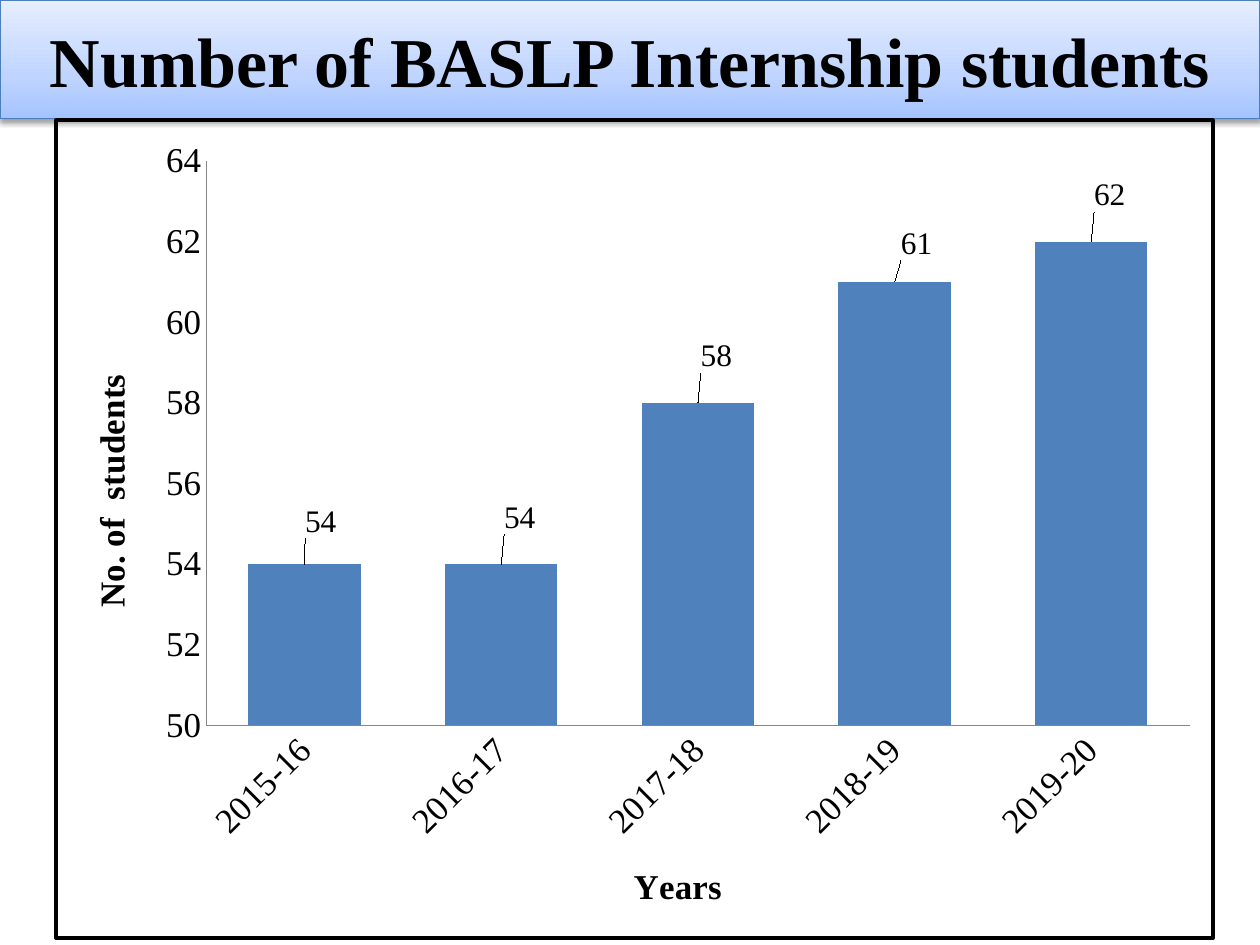
from lxml.etree import SubElement
from pptx import Presentation
from pptx.chart.data import CategoryChartData
from pptx.dml.color import RGBColor
from pptx.enum.chart import XL_CHART_TYPE, XL_LABEL_POSITION, XL_TICK_MARK
from pptx.enum.shapes import MSO_SHAPE
from pptx.enum.text import MSO_ANCHOR, PP_ALIGN
from pptx.oxml import parse_xml
from pptx.oxml.ns import nsdecls, qn
from pptx.util import Inches, Pt

TITLE = "Number of BASLP Internship students"
YEARS = ["2015-16", "2016-17", "2017-18", "2018-19", "2019-20"]
COUNTS = [54, 54, 58, 61, 62]
# Label shifts from their usual place, as shares of the chart size
SHIFTS = [(0.014, -0.025), (0.016, -0.03), (0.016, -0.03),
          (0.019, -0.02), (0.016, -0.03)]
STOPS = [(0, "A4C4FF"), (35, "BFD4FF"), (100, "E6EEFF")]

FONT = "Times New Roman"
BLACK = RGBColor(0, 0, 0)
BLUE = RGBColor(0x4F, 0x81, 0xBD)
EDGE = RGBColor(0x4B, 0x7E, 0xBC)
GRAY = RGBColor(0x86, 0x86, 0x86)


def style(font, size, bold=False):
    font.name, font.size, font.bold = FONT, Pt(size), bold
    font.color.rgb = BLACK


def layout(**parts):
    """Return a manual chart layout."""
    tags = "".join(f'<c:{k} val="{v}"/>' for k, v in parts.items())
    return parse_xml(f'<c:layout {nsdecls("c")}><c:manualLayout>{tags}'
                     '</c:manualLayout></c:layout>')


def set_axis(axis, name, turn):
    axis.has_major_gridlines = False
    axis.major_tick_mark = axis.minor_tick_mark = XL_TICK_MARK.NONE
    axis.format.line.color.rgb = GRAY
    axis.format.line.width = Pt(0.75)
    style(axis.tick_labels.font, 20)
    frame = axis.axis_title.text_frame
    frame.text = name
    style(frame.paragraphs[0].font, 20, True)
    frame._txBody.bodyPr.set("rot", str(turn * 60000))


deck = Presentation()
deck.slide_width, deck.slide_height = Inches(10), Inches(7.5)
slide = deck.slides.add_slide(deck.slide_layouts[6])

# Title band
band = slide.shapes.add_shape(MSO_SHAPE.RECTANGLE, 0, 0, Inches(10), Inches(0.94))
band.line.color.rgb = EDGE
band.line.width = Pt(0.75)
band.fill.gradient()
band.fill.gradient_angle = 90
stops = band._element.spPr.find(qn("a:gradFill")).find(qn("a:gsLst"))
for old in list(stops):
    stops.remove(old)
for spot, color in STOPS:
    stop = SubElement(stops, qn("a:gs"), pos=str(spot * 1000))
    SubElement(stop, qn("a:srgbClr"), val=color)
band.shadow.inherit = False
glow = SubElement(band._element.spPr.find(qn("a:effectLst")), qn("a:outerShdw"),
                  blurRad=str(Pt(3.1)), dist=str(Pt(1.6)), dir="5400000",
                  rotWithShape="0")
shade = SubElement(glow, qn("a:srgbClr"), val="000000")
SubElement(shade, qn("a:alpha"), val="38000")
text = band.text_frame
text.word_wrap = True
text.vertical_anchor = MSO_ANCHOR.MIDDLE
text.text = TITLE
text.paragraphs[0].alignment = PP_ALIGN.CENTER
style(text.paragraphs[0].font, 40, True)

# Column chart
data = CategoryChartData()
data.categories = YEARS
data.add_series("Series 1", COUNTS)
chart = slide.shapes.add_chart(
    XL_CHART_TYPE.COLUMN_CLUSTERED, Inches(0.43), Inches(0.94),
    Inches(9.21), Inches(6.52), data).chart
chart.has_legend = chart.has_title = False
style(chart.font, 12)
set_axis(chart.category_axis, "Years", 0)
set_axis(chart.value_axis, "No. of  students", -90)
chart.value_axis.minimum_scale = 50
chart.value_axis.maximum_scale = 64
chart.value_axis.major_unit = 2
chart.category_axis.tick_labels.font  # creates the text properties
chart.category_axis._element.find(qn("c:txPr")).find(qn("a:bodyPr")).set(
    "rot", str(-45 * 60000))

# Columns and their labels
plot = chart.plots[0]
plot.gap_width = 75
plot.vary_by_categories = False
bars = plot.series[0]
bars.format.fill.solid()
bars.format.fill.fore_color.rgb = BLUE
bars.data_labels.show_value = True
style(bars.data_labels.font, 18)
for i, (x, y) in enumerate(SHIFTS):
    label = bars.points[i].data_label
    style(label.font, 18)
    label.position = XL_LABEL_POSITION.OUTSIDE_END
    label._get_or_add_dLbl().insert(1, layout(x=x, y=y))

# Plot place and chart border
area = chart._chartSpace.chart.plotArea
for old in area.findall(qn("c:layout")):
    area.remove(old)
area.insert(0, layout(layoutTarget="inner", xMode="edge", yMode="edge",
                      x=0.13, y=0.05, w=0.85, h=0.69))
border = parse_xml(
    f'<c:spPr {nsdecls("c", "a")}><a:ln w="{Pt(2)}"><a:solidFill>'
    '<a:srgbClr val="000000"/></a:solidFill></a:ln></c:spPr>')
chart._chartSpace.chart.addnext(border)

deck.save("out.pptx")
